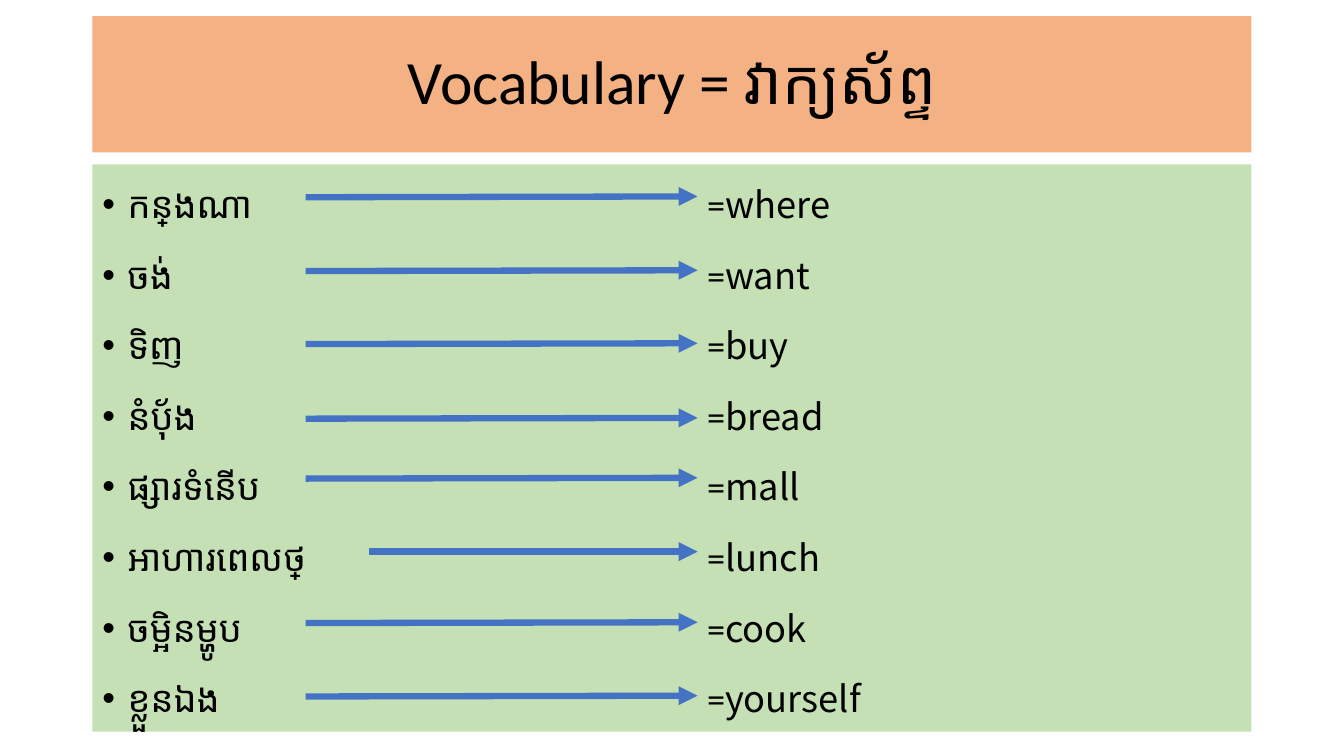
from dataclasses import dataclass

from lxml import etree
from pptx import Presentation, util as u
from pptx.dml import color
from pptx.enum import shapes, text
from pptx.oxml import ns

LEFT, WIDTH = 2.33, 29.21
TIP = 17.58
INK, BLUE = "000000", "4472C4"
LATIN, WORD = "Calibri", "Noto Sans CJK JP"


@dataclass
class Entry:
    khmer: str
    gloss: str
    y: float
    rise: float = 0.02
    start: float = 7.7


ENTRIES = [
    Entry("កន្លែងណា", "where", 4.97),
    Entry("ចង់", "want", 6.83),
    Entry("ទិញ", "buy", 8.67),
    Entry("នំបុ័ង", "bread", 10.55),
    Entry("ផ្សារទំនើប", "mall", 12.06),
    Entry("អាហារពេលថ្ងៃ", "lunch", 13.9, 0, 9.3),
    Entry("ចម្អិនម្ហូប", "cook", 15.7),
    Entry("ខ្លួនឯង", "yourself", 17.55),
]


def rgb(code: str) -> color.RGBColor:
    return color.RGBColor.from_string(code)


def add_node(parent, tag: str, **attrs: str):
    return etree.SubElement(parent, ns.qn(tag), attrs)


def add_panel(slide, top: float, height: float, fill: str):
    panel = slide.shapes.add_shape(
        shapes.MSO_SHAPE.RECTANGLE, u.Cm(LEFT), u.Cm(top), u.Cm(WIDTH), u.Cm(height))
    panel.shadow.inherit = False
    panel.fill.solid()
    panel.fill.fore_color.rgb = rgb(fill)
    panel.line.fill.background()
    panel.text_frame.word_wrap = True
    return panel


def style(run, size: float, font: str) -> None:
    run.font.size = u.Pt(size)
    run.font.name = font
    run.font.color.rgb = rgb(INK)


def add_title(slide) -> None:
    frame = add_panel(slide, 0.41, 3.43, "F4B183").text_frame
    frame.text = "Vocabulary = វាក្យស័ព្ទ"
    frame.vertical_anchor = text.MSO_ANCHOR.MIDDLE
    line = frame.paragraphs[0]
    line.alignment = text.PP_ALIGN.CENTER
    line.line_spacing = 0.9
    style(line.runs[0], 44, LATIN)


def set_bullet(line) -> None:
    """Give a paragraph its bullet, hanging indent and tab stop."""
    props = line._p.get_or_add_pPr()
    props.set("marL", str(u.Cm(0.635)))
    props.set("indent", str(u.Cm(-0.635)))
    add_node(props, "a:buFont", typeface="Arial")
    add_node(props, "a:buChar", char="•")
    tabs = add_node(props, "a:tabLst")
    add_node(tabs, "a:tab", pos=str(u.Cm(15.24)), algn="l")


def add_list(slide, entries: list[Entry]) -> None:
    frame = add_panel(slide, 4.14, 14.3, "C5E0B4").text_frame
    frame.vertical_anchor = text.MSO_ANCHOR.TOP
    for i, entry in enumerate(entries):
        line = frame.add_paragraph() if i else frame.paragraphs[0]
        line.text = f"{entry.khmer}\t="
        line.add_run().text = entry.gloss
        line.alignment = text.PP_ALIGN.LEFT
        line.line_spacing = 1.3
        line.space_before = u.Pt(10)
        set_bullet(line)
        for run, font in zip(line.runs, (LATIN, WORD)):
            style(run, 25.9, font)


def add_arrow(slide, entry: Entry) -> None:
    arrow = slide.shapes.add_connector(
        shapes.MSO_CONNECTOR.STRAIGHT, u.Cm(entry.start), u.Cm(entry.y),
        u.Cm(TIP), u.Cm(entry.y - entry.rise))
    arrow.line.color.rgb = rgb(BLUE)
    arrow.line.width = u.Pt(4.5)
    add_node(arrow.line._get_or_add_ln(), "a:tailEnd", type="triangle")
    add_node(arrow._element.spPr, "a:effectLst")


def main() -> None:
    deck = Presentation()
    deck.slide_width, deck.slide_height = u.Cm(33.87), u.Cm(19.05)
    slide = deck.slides.add_slide(deck.slide_layouts[6])
    add_title(slide)
    add_list(slide, ENTRIES)
    for entry in ENTRIES:
        add_arrow(slide, entry)
    deck.save("out.pptx")


if __name__ == "__main__":
    main()
